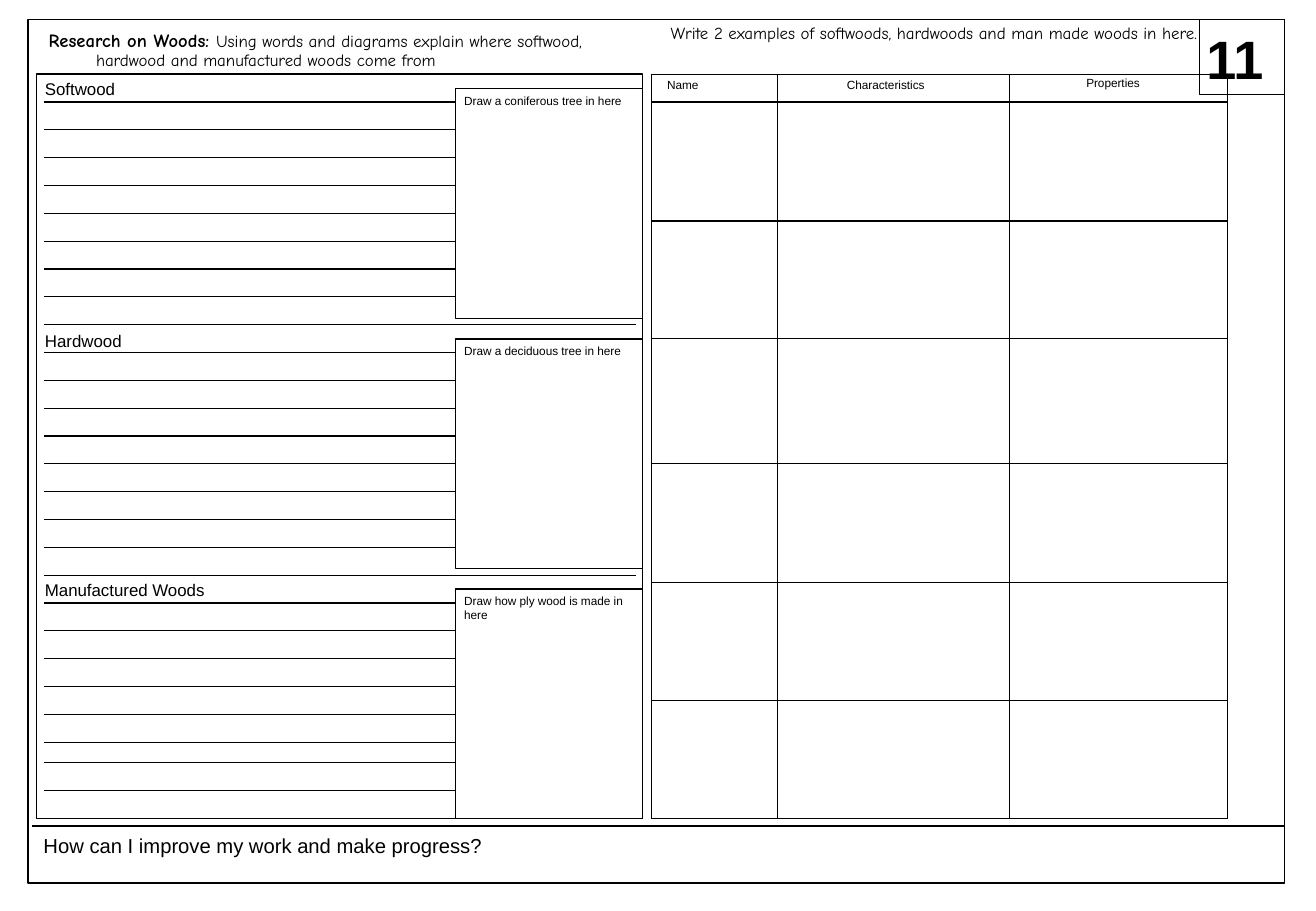
import pptx
import pptx.dml.color
import pptx.enum.shapes
import pptx.enum.text
import pptx.oxml
import pptx.oxml.ns
import pptx.util
from dataclasses import dataclass

Inches = pptx.util.Inches
Pt = pptx.util.Pt


@dataclass(frozen=True)
class Theme:
    ink = pptx.dml.color.RGBColor(0, 0, 0)
    paper = pptx.dml.color.RGBColor(255, 255, 255)
    line = Pt(0.75)
    body_font = "Arial"
    task_font = "Comic Neue"
    label = Pt(7)
    task = Pt(10)
    heading = Pt(10)
    title = Pt(11)
    footer = Pt(12)
    number = Pt(32)


theme = Theme()
presentation = pptx.Presentation()
presentation.slide_width = Inches(10.83)
presentation.slide_height = Inches(7.5)
slide = presentation.slides.add_slide(presentation.slide_layouts[5])


def write(frame, runs, margins=(0.1, 0.05), font=theme.body_font, hanging=0):
    """Fill a text frame with runs of (text, size, bold)."""
    frame.word_wrap = True
    frame.auto_size = pptx.enum.text.MSO_AUTO_SIZE.NONE
    frame.vertical_anchor = pptx.enum.text.MSO_ANCHOR.TOP
    frame.margin_left = frame.margin_right = Inches(margins[0])
    frame.margin_top = frame.margin_bottom = Inches(margins[1])
    paragraph = frame.paragraphs[0]
    paragraph.alignment = pptx.enum.text.PP_ALIGN.LEFT
    if hanging:
        paragraph.line_spacing = 0.9
        properties = paragraph._p.get_or_add_pPr()
        properties.set("marL", str(Inches(hanging)))
        properties.set("indent", str(-Inches(hanging)))
    for text, size, bold in runs:
        run = paragraph.add_run()
        run.text = text
        run.font.name = font
        run.font.size = size
        run.font.bold = bold
        run.font.color.rgb = theme.ink


# Title and table instruction
title = slide.shapes.title
title.left, title.top, title.width, title.height = map(Inches, (0.3, 0.21, 4.93, 0.4))
write(title.text_frame, [
    ("Research on Woods: ", theme.title, True),
    ("Using words and diagrams explain where softwood, hardwood and manufactured "
     "woods come from", theme.task, False),
], font=theme.task_font, hanging=0.39)
instruction = slide.shapes.add_textbox(*map(Inches, (5.42, 0.16, 4.69, 0.4)))
write(instruction.text_frame, [
    ("Write 2 examples of softwoods, hardwoods and man made woods in here.", theme.task, False),
], font=theme.task_font, hanging=0.39)

# Footer rule and writing lines
pitch = (6.11 - 0.84) / 23
writing_lines = [0.84 + pitch * i for i in range(24)] + [6.28, 6.51, 6.74]
rules = [(0.26, 10.57, 6.8)] + [(0.36, 5.23, y) for y in writing_lines]
for start, end, y in rules:
    rule = slide.shapes.add_connector(
        pptx.enum.shapes.MSO_CONNECTOR.STRAIGHT,
        Inches(start), Inches(y), Inches(end), Inches(y))
    rule.line.color.rgb = theme.ink
    rule.line.width = theme.line
    rule._element.spPr.append(pptx.oxml.parse_xml(
        f'<a:effectLst {pptx.oxml.ns.nsdecls("a")}/>'))

# Page frame, number box, research panel and drawing boxes
drawing_tops = (0.73, 2.79, 4.85)
boxes = [
    (0.23, 0.16, 10.34, 7.11, False),
    (9.87, 0.16, 0.7, 0.62, False),
    (0.3, 0.61, 4.99, 6.13, False),
] + [(3.75, top, 1.54, 1.89, True) for top in drawing_tops]
for left, top, width, height, filled in boxes:
    box = slide.shapes.add_shape(
        pptx.enum.shapes.MSO_SHAPE.RECTANGLE, *map(Inches, (left, top, width, height)))
    box.shadow.inherit = False
    box.line.color.rgb = theme.ink
    box.line.width = theme.line
    if filled:
        box.fill.solid()
        box.fill.fore_color.rgb = theme.paper
    else:
        box.fill.background()

# Section headings and drawing prompts
sections = [
    ("Softwood", 0.61, "Draw a coniferous tree in here"),
    ("Hardwood", 2.68, "Draw a deciduous tree in here"),
    ("Manufactured Woods", 4.73, "Draw how ply wood is made in here"),
]
for (wood, heading_top, prompt_text), drawing_top in zip(sections, drawing_tops):
    heading = slide.shapes.add_textbox(*map(Inches, (0.3, heading_top, 2.16, 0.26)))
    write(heading.text_frame, [(wood, theme.heading, False)], (0.07, 0.04))
    prompt = slide.shapes.add_textbox(*map(Inches, (3.75, drawing_top, 1.54, 0.34)))
    write(prompt.text_frame, [(prompt_text, theme.label, False)], (0.07, 0.04))

# Examples table: label, column width, left and top margin of the label
columns = [
    ("Name", 1.04, 0.13, 0.04),
    ("Characteristics", 1.91, 0.57, 0.04),
    ("Properties", 1.79, 0.63, 0.02),
]
row_heights = (0.23, 0.98, 0.97, 1.03, 0.98, 0.97, 0.97)
table = slide.shapes.add_table(
    len(row_heights), len(columns), *map(Inches, (5.36, 0.61, 4.74, 6.13))).table
table.first_row = table.horz_banding = False
for row, height in zip(table.rows, row_heights):
    row.height = Inches(height)
for index, (label, width, left, top) in enumerate(columns):
    table.columns[index].width = Inches(width)
    cell = table.cell(0, index)
    cell.margin_left, cell.margin_top = Inches(left), Inches(top)
    cell.margin_right = cell.margin_bottom = 0
    run = cell.text_frame.paragraphs[0].add_run()
    run.text = label
    run.font.name = theme.body_font
    run.font.size = theme.label
    run.font.color.rgb = theme.ink
for cell in table.iter_cells():
    properties = cell._tc.get_or_add_tcPr()
    for side in ("lnL", "lnR", "lnT", "lnB"):
        properties.append(pptx.oxml.parse_xml(
            f'<a:{side} {pptx.oxml.ns.nsdecls("a")} w="{theme.line}"><a:solidFill>'
            f'<a:srgbClr val="{theme.ink}"/></a:solidFill></a:{side}>'))
    cell.fill.background()

# Page number and review question
number = slide.shapes.add_textbox(*map(Inches, (9.83, 0.16, 1, 0.64)))
write(number.text_frame, [("11", theme.number, True)])
question = slide.shapes.add_textbox(*map(Inches, (0.26, 6.81, 5.47, 0.3)))
write(question.text_frame,
      [("How can I improve my work and make progress?", theme.footer, False)])

presentation.save("out.pptx")
